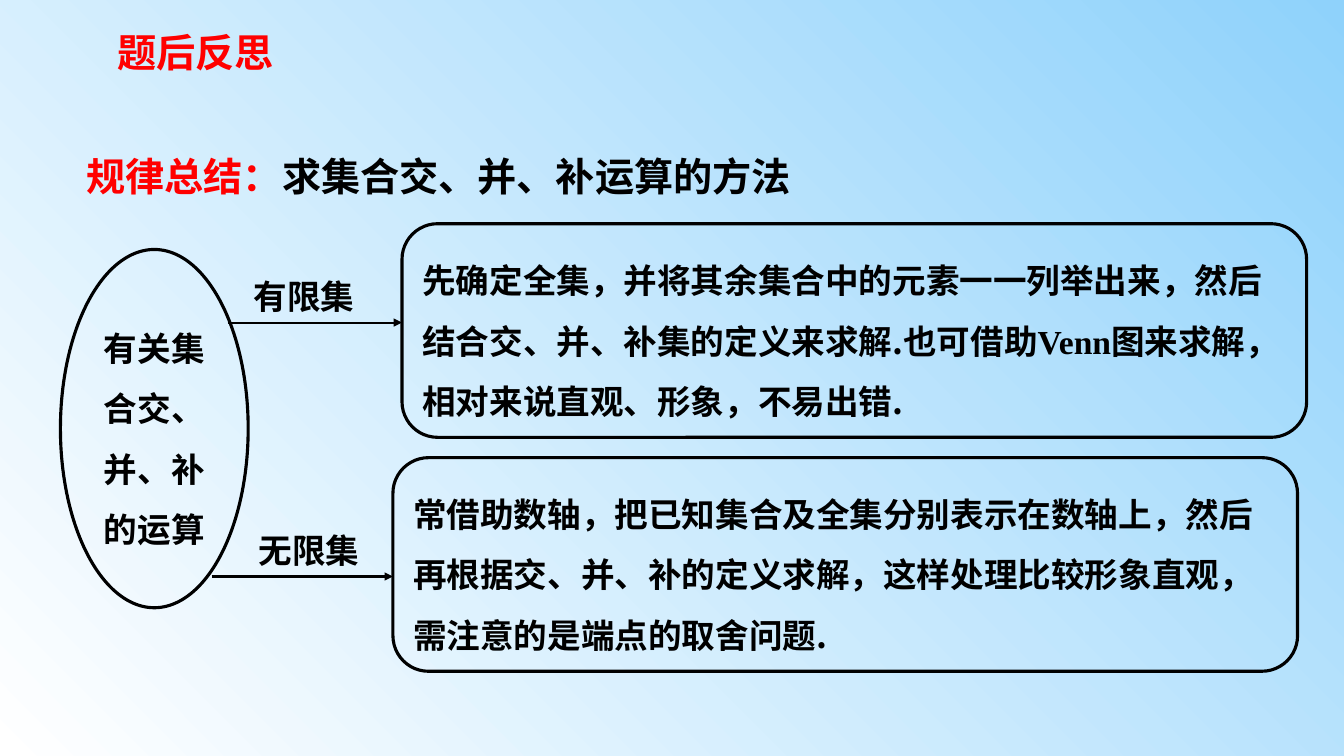
from dataclasses import dataclass

from lxml import etree
from pptx import Presentation
from pptx import util as u
from pptx.dml.color import RGBColor
from pptx.enum import shapes, text
from pptx.oxml import ns


@dataclass(frozen=True)
class Theme:
    """Colours, fonts and sizes in points used on the slide."""
    ink: str = "000000"
    accent: str = "FF0000"
    ground: tuple = ("FFFFFF", "8FD2FB")
    heading: int = 28
    body: int = 24
    outline: float = 2.25
    arrow: float = 1.5
    latin: str = "Times New Roman"
    asian: str = "Noto Sans CJK SC"


THEME = Theme()


def write_text(box, *runs, size=THEME.body, font=THEME.latin, spacing=1.0,
               align=text.PP_ALIGN.LEFT, anchor=text.MSO_ANCHOR.TOP):
    """Fill a box with one paragraph of (wording, run format) pairs."""
    frame = box.text_frame
    frame.word_wrap = True
    frame.vertical_anchor = anchor
    para = frame.paragraphs[0]
    para.alignment = align
    para.line_spacing = spacing
    for wording, style in runs:
        span = para.add_run()
        span.text = wording
        span.font.size = u.Pt(size)
        span.font.bold = True
        span.font.color.rgb = RGBColor.from_string(style.get("color", THEME.ink))
        span.font.name = style.get("font", font)
        asian = etree.SubElement(span.font._element, ns.qn("a:ea"))
        asian.set("typeface", THEME.asian)


def add_label(page, bounds, *runs, **style):
    """Add a plain text box."""
    box = page.shapes.add_textbox(*map(u.Pt, bounds))
    write_text(box, *runs, **style)


def add_outline(page, kind, bounds, *runs, **style):
    """Add an unfilled, outlined shape with text centred vertically."""
    box = page.shapes.add_shape(kind, *map(u.Pt, bounds))
    box.shadow.inherit = False
    box.fill.background()
    box.line.color.rgb = RGBColor.from_string(THEME.ink)
    box.line.width = u.Pt(THEME.outline)
    write_text(box, *runs, font=THEME.asian, spacing=1.5,
               anchor=text.MSO_ANCHOR.MIDDLE, **style)


def add_arrow(page, left, right, top):
    """Add a horizontal arrow pointing right."""
    arrow = page.shapes.add_connector(
        shapes.MSO_CONNECTOR.STRAIGHT, *map(u.Pt, (left, top, right, top)))
    arrow.line.color.rgb = RGBColor.from_string(THEME.ink)
    arrow.line.width = u.Pt(THEME.arrow)
    head = etree.SubElement(arrow.line._get_or_add_ln(), ns.qn("a:tailEnd"))
    head.set("type", "triangle")
    etree.SubElement(arrow._element.spPr, ns.qn("a:effectLst"))


def add_branch(page, label, label_at, arrow_from, arrow_top, box_at, *runs):
    """Add a labelled arrow leading to a rounded box of explanation."""
    left, top = box_at
    add_arrow(page, arrow_from, left, arrow_top)
    add_outline(page, shapes.MSO_SHAPE.ROUNDED_RECTANGLE,
                (left, top, 646.5, 152.6), *runs)
    add_label(page, (*label_at, 109.4, 36), (label, {}))


def paint_background(page):
    """Shade the page from the lower left to the upper right."""
    fill = page.background.fill
    fill.gradient()
    fill.gradient_angle = 45
    for stop, color in zip(fill.gradient_stops, THEME.ground):
        stop.color.rgb = RGBColor.from_string(color)


def main():
    """Build and save the slide."""
    deck = Presentation()
    deck.slide_width, deck.slide_height = u.Pt(960.5), u.Pt(540)
    page = deck.slides.add_slide(deck.slide_layouts[6])
    paint_background(page)

    accent = {"color": THEME.accent}
    add_label(page, (77, 12.2, 835.2, 50.4), ("题后反思", accent),
              size=THEME.heading, anchor=text.MSO_ANCHOR.MIDDLE)
    add_label(page, (54.7, 88.6, 879.1, 62.6), ("规律总结：", accent),
              ("求集合交、并、补运算的方法", {}), size=THEME.heading, spacing=1.5)
    add_outline(page, shapes.MSO_SHAPE.OVAL, (43.2, 178.2, 134.2, 255.9),
                ("有关集合交、并、补的运算", {}), align=text.PP_ALIGN.CENTER)
    add_branch(page, "有限集", (174.2, 193.7), 162.7, 230.4, (287.3, 159.8),
               ("先确定全集，并将其余集合中的元素一一列举出来，然后结合交、并、补集的定义来求解.也可借助", {}),
               ("Venn", {"font": THEME.latin}),
               ("图来求解，相对来说直观、形象，不易出错.", {}))
    add_branch(page, "无限集", (177.8, 375.1), 151.2, 411.8, (280.8, 326.9),
               ("常借助数轴，把已知集合及全集分别表示在数轴上，然后再根据交、并、补的定义求解，"
                "这样处理比较形象直观，需注意的是端点的取舍问题.", {}))
    deck.save("out.pptx")


if __name__ == "__main__":
    main()
